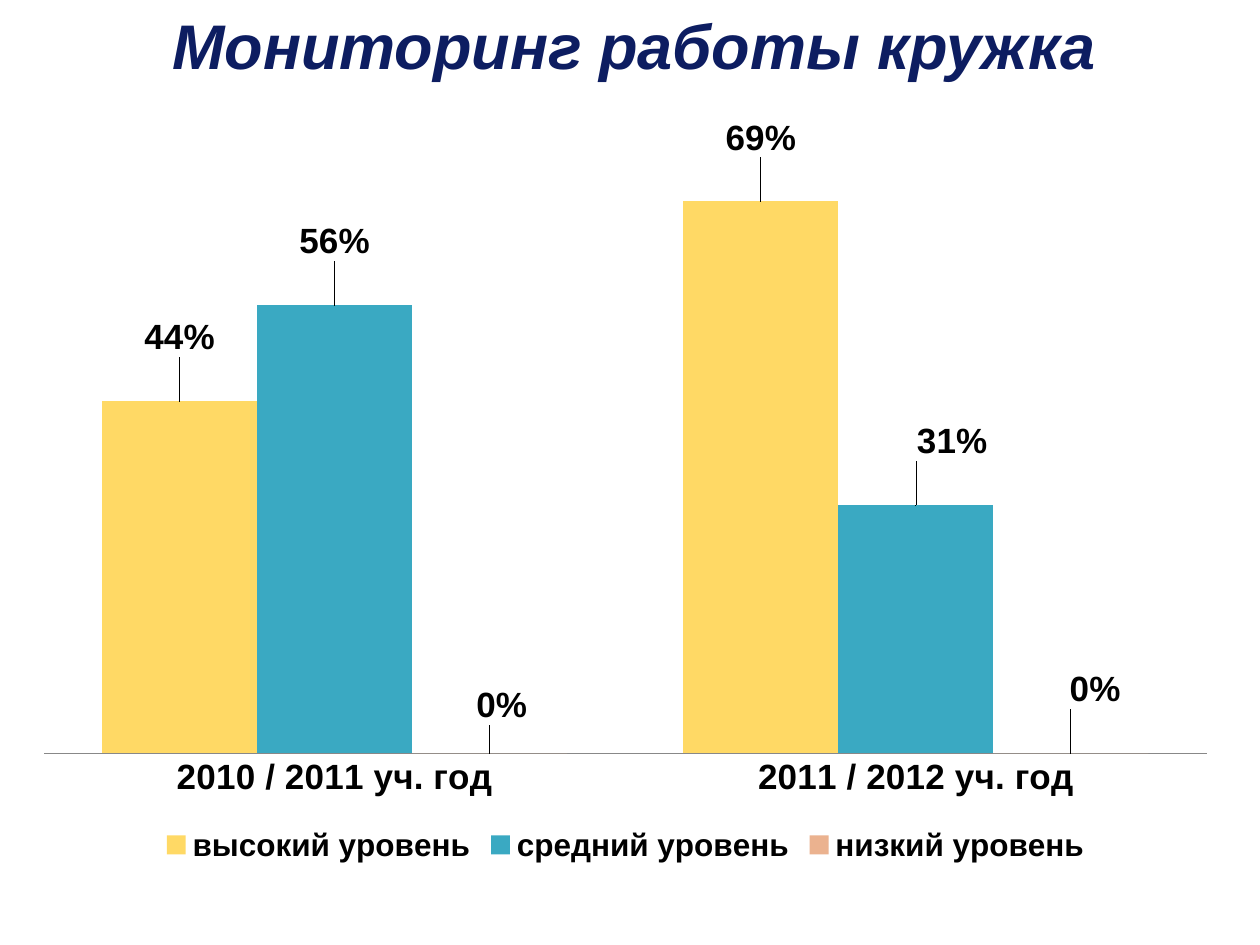
from pptx import Presentation
from pptx import util as u
from pptx.chart.data import CategoryChartData
from pptx.dml.color import RGBColor
from pptx.enum import chart as ch, text
from pptx.oxml import parse_xml
from pptx.oxml.ns import nsdecls

NAVY = RGBColor(0x0D, 0x1D, 0x61)
BLACK = RGBColor(0, 0, 0)
GREY = RGBColor(0x88, 0x88, 0x88)
YELLOW = RGBColor(0xFF, 0xD9, 0x65)
TEAL = RGBColor(0x3A, 0xA9, 0xC2)
PEACH = RGBColor(0xEB, 0xB2, 0x8F)

YEARS = ["2010 / 2011 уч. год", "2011 / 2012 уч. год"]
# Name, colour, values, label offsets as fractions of the chart
LEVELS = [
    ("высокий уровень", YELLOW, (0.44, 0.69), ((0, -0.05), (0, -0.05))),
    ("средний уровень", TEAL, (0.56, 0.31), ((0, -0.05), (0.03, -0.05))),
    ("низкий уровень", PEACH, (0, 0), ((0.01, -0.03), (0.02, -0.05))),
]


def px(n):
    return u.Emu(round(n * 914400 / 126))


def layout(x, y, size=None):
    """Manual chart layout: an offset, or an inner plot area when sized."""
    parts = [("x", x), ("y", y)]
    if size:
        parts = [("layoutTarget", "inner"), ("xMode", "edge"), ("yMode", "edge"),
                 *parts, ("w", size[0]), ("h", size[1])]
    body = "".join(f'<c:{tag} val="{val}"/>' for tag, val in parts)
    return parse_xml(f'<c:layout {nsdecls("c")}><c:manualLayout>{body}'
                     '</c:manualLayout></c:layout>')


class Deck:
    FONT = "Arial"

    def __init__(self, width, height):
        self.prs = Presentation()
        self.prs.slide_width, self.prs.slide_height = px(width), px(height)
        self.s = self.prs.slides.add_slide(self.prs.slide_layouts[6])

    def style(self, font, size, color=BLACK, **extra):
        values = {"name": self.FONT, "size": u.Pt(size), "bold": True, **extra}
        for key, value in values.items():
            setattr(font, key, value)
        font.color.rgb = color

    def title(self, words, box):
        tf = self.s.shapes.add_textbox(*map(px, box)).text_frame
        tf.word_wrap = True
        p = tf.paragraphs[0]
        p.alignment = text.PP_ALIGN.CENTER
        r = p.add_run()
        r.text = words
        self.style(r.font, 36, NAVY, italic=True)

    def columns(self, categories, levels, box):
        data = CategoryChartData(number_format="0%")
        data.categories = categories
        for name, _, values, _ in levels:
            data.add_series(name, values)
        chart = self.s.shapes.add_chart(
            ch.XL_CHART_TYPE.COLUMN_CLUSTERED, *map(px, box), data).chart
        self.style(chart.font, 10, name="Lato", bold=False)
        chart.has_title = False

        # Plot area
        plot = chart.plots[0]
        plot.gap_width, plot.overlap, plot.vary_by_categories = 75, 0, False
        area = chart._chartSpace.chart.plotArea
        for old in area.findall(layout(0, 0).tag):
            area.remove(old)
        area.insert(0, layout(0.02, 0.02, (0.96, 0.83)))

        # Axes
        axis = chart.category_axis
        axis.major_tick_mark = ch.XL_TICK_MARK.NONE
        axis.format.line.color.rgb = GREY
        axis.format.line.width = u.Pt(0.75)
        self.style(axis.tick_labels.font, 20)
        scale = chart.value_axis
        scale.minimum_scale, scale.maximum_scale = 0, 0.8
        scale.has_major_gridlines = scale.visible = False

        # Legend
        chart.has_legend = True
        chart.legend.position = ch.XL_LEGEND_POSITION.BOTTOM
        chart.legend.include_in_layout = False
        self.style(chart.legend.font, 18)

        for series, (_, color, _, offsets) in zip(plot.series, levels):
            self.series(series, color, offsets)

    def series(self, series, color, offsets):
        series.format.fill.solid()
        series.format.fill.fore_color.rgb = color
        labels = series.data_labels
        labels.show_value = True
        labels.number_format, labels.number_format_is_linked = "0%", False
        self.style(labels.font, 20)
        for i, offset in enumerate(offsets):
            label = series.points[i].data_label
            self.style(label.font, 20)
            label.position = ch.XL_LABEL_POSITION.OUTSIDE_END
        for idx, offset in zip(series._element.xpath("c:dLbls/c:dLbl/c:idx"), offsets):
            idx.addnext(layout(*offset))


def main():
    deck = Deck(1260, 945)
    deck.title("Мониторинг работы кружка", (69, 0, 1131, 89))
    deck.columns(YEARS, LEVELS, (20, 98, 1211, 771))
    deck.prs.save("out.pptx")


if __name__ == "__main__":
    main()
